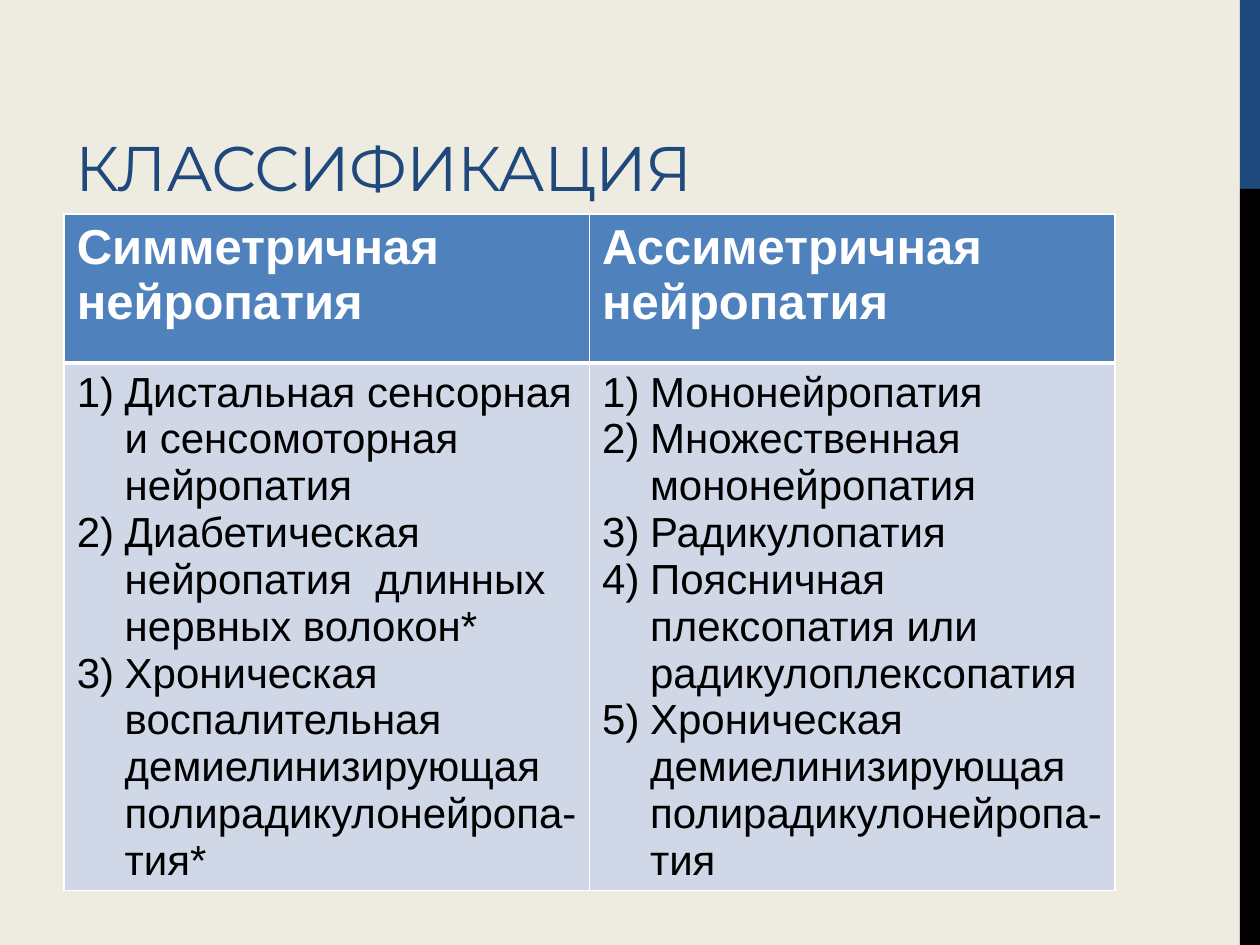
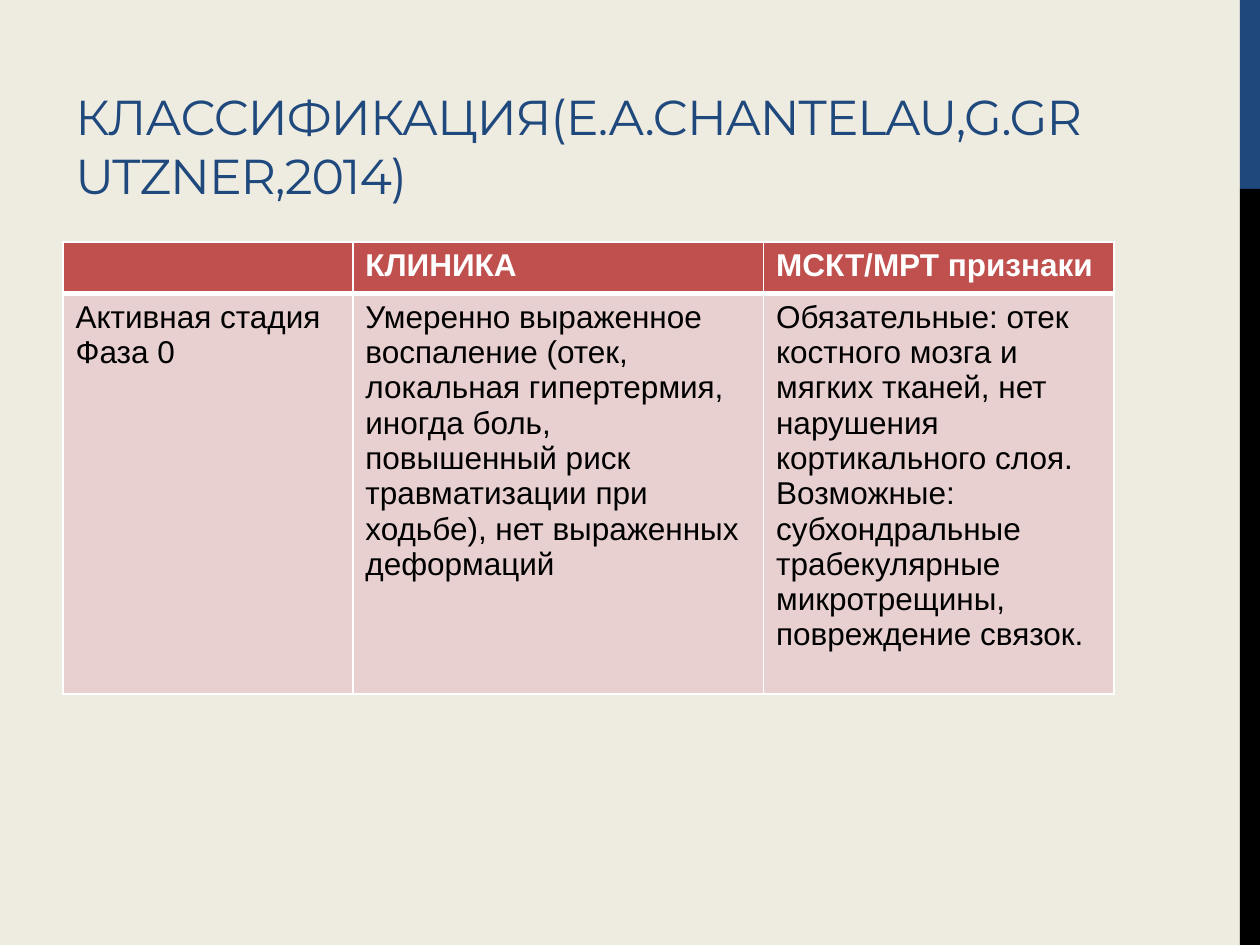
"""Build two slides on the classification of neuropathy."""
from dataclasses import dataclass

from lxml import etree
from pptx import Presentation
from pptx import util as u
from pptx.dml.color import RGBColor
from pptx.enum import shapes, text
from pptx.oxml.ns import qn

NAVY = RGBColor(0x1F, 0x49, 0x7D)
BLACK = RGBColor(0, 0, 0)
WHITE = RGBColor(255, 255, 255)
CREAM = RGBColor(0xEE, 0xEC, 0xE1)
BLUE = RGBColor(0x4F, 0x81, 0xBD)
PALE_BLUE = RGBColor(0xD0, 0xD8, 0xE8)
RED = RGBColor(0xC0, 0x50, 0x4D)
PALE_RED = RGBColor(0xE8, 0xD0, 0xD0)

WIDTH, HEIGHT = u.Inches(10), u.Inches(7.5)
BAND_LEFT, BAND_SPLIT = 0.984, 0.2
TITLE_LEFT, TITLE_TOP, TITLE_HEIGHT = 0.05, 0.17 / 7.5, 0.2
NUMBER_INDENT = u.Inches(0.38)


@dataclass
class Band:
    top: float
    bottom: float
    color: RGBColor


@dataclass
class Classification:
    title: str
    title_width: float
    title_size: int
    left: float
    top: float
    columns: list[float]
    rows: list[float]
    header_color: RGBColor
    body_color: RGBColor
    header_size: int
    body_size: int
    header: list[str]
    body: list[list[str]]
    numbered: bool = False


BANDS = [Band(0, BAND_SPLIT, NAVY), Band(BAND_SPLIT, 1, BLACK)]

CLASSIFICATIONS = [
    Classification(
        title="КЛАССИФИКАЦИЯ", title_width=0.633, title_size=36,
        left=0.051, top=1.7 / 7.5,
        columns=[0.417, 0.417], rows=[1.18 / 7.5, 4.18 / 7.5],
        header_color=BLUE, body_color=PALE_BLUE, header_size=28, body_size=24,
        header=["Симметричная нейропатия", "Ассиметричная нейропатия"],
        body=[
            ["Дистальная сенсорная и сенсомоторная нейропатия",
             "Диабетическая нейропатия  длинных нервных волокон*",
             "Хроническая воспалительная демиелинизирующая "
             "полирадикулонейропа-тия*"],
            ["Мононейропатия",
             "Множественная мононейропатия",
             "Радикулопатия",
             "Поясничная плексопатия или радикулоплексопатия",
             "Хроническая демиелинизирующая полирадикулонейропа-тия"],
        ],
        numbered=True,
    ),
    Classification(
        title="КЛАССИФИКАЦИЯ(E.A.CHANTELAU,G.GRUTZNER,2014)",
        title_width=0.836, title_size=28,
        left=0.05, top=1.92 / 7.5,
        columns=[0.23, 0.326, 0.278], rows=[0.41 / 7.5, 3.18 / 7.5],
        header_color=RED, body_color=PALE_RED, header_size=18, body_size=18,
        header=["", "КЛИНИКА", "МСКТ/МРТ признаки"],
        body=[
            ["Активная стадия", "Фаза 0"],
            ["Умеренно выраженное воспаление (отек, локальная гипертермия, "
             "иногда боль, повышенный риск травматизации при ходьбе), "
             "нет выраженных деформаций"],
            ["Обязательные: отек костного мозга и мягких тканей, нет "
             "нарушения кортикального слоя. Возможные: субхондральные "
             "трабекулярные микротрещины, повреждение связок."],
        ],
    ),
]


def across(share: float) -> int:
    """Turn a share of the slide width into a length."""
    return round(WIDTH * share)


def down(share: float) -> int:
    """Turn a share of the slide height into a length."""
    return round(HEIGHT * share)


def write(paragraph, words: str, color: RGBColor, **formats):
    """Add a formatted run and return it."""
    run = paragraph.add_run()
    run.text = words
    run.font.color.rgb = color
    for key, value in formats.items():
        setattr(run.font, key, value)
    return run


def draw_band(slide, band: Band) -> None:
    """Draw one part of the right edge."""
    edge = slide.shapes.add_shape(
        shapes.MSO_SHAPE.RECTANGLE, across(BAND_LEFT), down(band.top),
        across(1 - BAND_LEFT), down(band.bottom - band.top))
    edge.shadow.inherit = False
    edge.fill.solid()
    edge.fill.fore_color.rgb = band.color
    edge.line.fill.background()


def draw_title(slide, topic: Classification) -> None:
    """Write the slide title on its bottom line."""
    frame = slide.shapes.add_textbox(
        across(TITLE_LEFT), down(TITLE_TOP),
        across(topic.title_width), down(TITLE_HEIGHT)).text_frame
    layout = {"word_wrap": True, "vertical_anchor": text.MSO_ANCHOR.BOTTOM,
              "auto_size": text.MSO_AUTO_SIZE.NONE}
    for key, value in layout.items():
        setattr(frame, key, value)
    heading = write(frame.paragraphs[0], topic.title, NAVY,
                    name="Montserrat", size=u.Pt(topic.title_size))
    heading.font._element.set("spc", "-60")


def add_borders(cell, top: float, bottom: float) -> None:
    """Give a cell white borders, widths in points."""
    properties = cell._tc.get_or_add_tcPr()
    for side, points in {"L": 1, "R": 1, "T": top, "B": bottom}.items():
        line = etree.SubElement(properties, qn(f"a:ln{side}"), w=str(u.Pt(points)))
        fill = etree.SubElement(line, qn("a:solidFill"))
        etree.SubElement(fill, qn("a:srgbClr"), val=str(WHITE))


def number(paragraph) -> None:
    """Number a paragraph with a hanging indent."""
    properties = paragraph._p.get_or_add_pPr()
    properties.set("marL", str(NUMBER_INDENT))
    properties.set("indent", str(-NUMBER_INDENT))
    etree.SubElement(properties, qn("a:buFont"), typeface="+mj-lt")
    etree.SubElement(properties, qn("a:buAutoNum"), type="arabicParenR")


def fill_cell(cell, lines: list[str], fill: RGBColor, color: RGBColor,
              size: int, bold: bool, numbered: bool) -> None:
    """Colour a cell and write its paragraphs."""
    cell.fill.solid()
    cell.fill.fore_color.rgb = fill
    frame = cell.text_frame
    for index, words in enumerate(lines):
        paragraph = frame.add_paragraph() if index else frame.paragraphs[0]
        if numbered:
            number(paragraph)
        if words:
            write(paragraph, words, color, name="Arial", size=u.Pt(size), bold=bold)


def draw_table(slide, topic: Classification) -> None:
    """Draw the classification table."""
    table = slide.shapes.add_table(
        len(topic.rows), len(topic.columns), across(topic.left), down(topic.top),
        across(sum(topic.columns)), down(sum(topic.rows))).table
    for row, share in zip(table.rows, topic.rows):
        row.height = down(share)
    for index, share in enumerate(topic.columns):
        table.columns[index].width = across(share)
        head, detail = table.cell(0, index), table.cell(1, index)
        add_borders(head, top=1, bottom=3)
        add_borders(detail, top=3, bottom=1)
        fill_cell(head, [topic.header[index]], topic.header_color, WHITE,
                  topic.header_size, True, False)
        fill_cell(detail, topic.body[index], topic.body_color, BLACK,
                  topic.body_size, False, topic.numbered)


def main() -> None:
    """Build and save the presentation."""
    deck = Presentation()
    deck.slide_width, deck.slide_height = WIDTH, HEIGHT
    for topic in CLASSIFICATIONS:
        slide = deck.slides.add_slide(deck.slide_layouts[6])
        slide.background.fill.solid()
        slide.background.fill.fore_color.rgb = CREAM
        for band in BANDS:
            draw_band(slide, band)
        draw_title(slide, topic)
        draw_table(slide, topic)
    deck.save("out.pptx")


if __name__ == "__main__":
    main()
